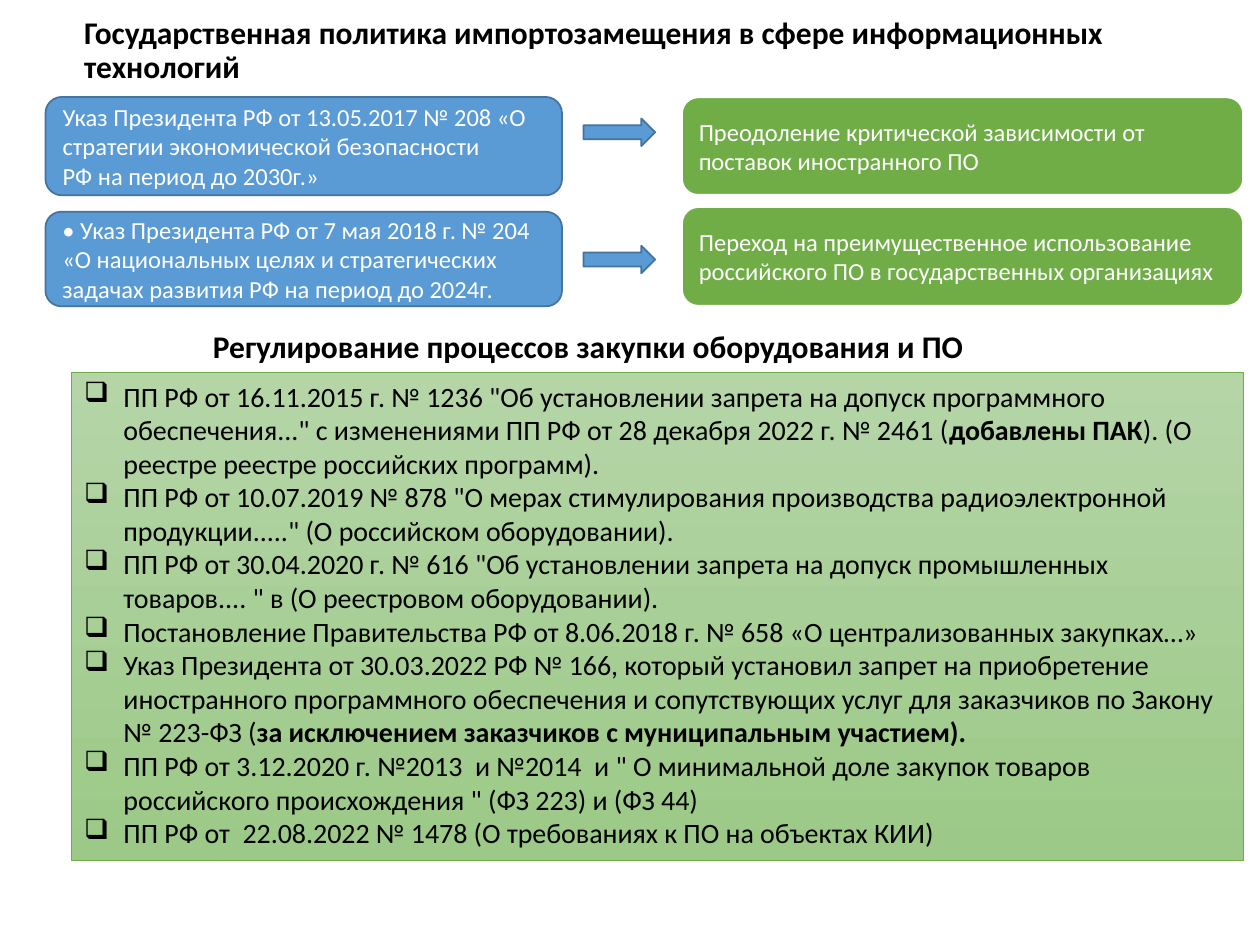
"""Build a slide on import substitution policy in information technology."""
from lxml import etree
from pptx import Presentation
from pptx import util as u
from pptx.dml.color import RGBColor
from pptx.enum import shapes, text
from pptx.oxml import ns

Pt = u.Pt
FONT = "Calibri"
BLACK = RGBColor(0x00, 0x00, 0x00)
WHITE = RGBColor(0xFF, 0xFF, 0xFF)
BLUE = RGBColor(0x5B, 0x9B, 0xD5)
DARK_BLUE = RGBColor(0x43, 0x73, 0x9E)
GREEN = RGBColor(0x70, 0xAD, 0x47)
LIGHT_GREEN = RGBColor(0xB5, 0xD5, 0xA7)
MID_GREEN = RGBColor(0x9C, 0xC9, 0x87)

DECREES = [
    ("Указ Президента РФ от 13.05.2017 № 208 «О стратегии экономической безопасности\n"
     "РФ на период до 2030г.»", (55.4, 56.2),
     "Преодоление критической зависимости от поставок иностранного ПО", (55.4, 56.2), 67.7),
    ("• Указ Президента РФ от 7 мая 2018 г. № 204 «О национальных целях и стратегических\n"
     "задачах развития РФ на период до 2024г.", (121, 54),
     "Переход на преимущественное использование\n"
     "российского ПО в государственных организациях", (118.1, 56.9), 140.4),
]

# Within each regulation, plain and bold pieces alternate, plain first.
REGULATIONS = [
    ['ПП РФ от 16.11.2015 г. № 1236 "Об установлении запрета на допуск программного '
     'обеспечения..." с изменениями ПП РФ от 28 декабря 2022 г. № 2461 (',
     "добавлены ПАК", "). (О реестре реестре российских программ)."],
    ['ПП РФ от 10.07.2019 № 878 "О мерах стимулирования производства радиоэлектронной '
     'продукции....." (О российском оборудовании).'],
    ['ПП РФ от 30.04.2020 г. № 616 "Об установлении запрета на допуск промышленных '
     'товаров.... " в (О реестровом оборудовании).'],
    ["Постановление Правительства РФ от 8.06.2018 г. № 658 «О централизованных закупках…»"],
    ["Указ Президента от 30.03.2022 РФ № 166, который установил запрет на приобретение "
     "иностранного программного обеспечения и сопутствующих услуг для заказчиков по Закону "
     "№ 223-ФЗ (", "за исключением заказчиков с муниципальным участием)."],
    ['ПП РФ от 3.12.2020 г. №2013  и №2014  и " О минимальной доле закупок товаров '
     'российского происхождения " (ФЗ 223) и (ФЗ 44)'],
    ["ПП РФ от  22.08.2022 № 1478 (О требованиях к ПО на объектах КИИ)"],
]


def style_font(font, size, color, bold=False):
    font.name, font.size, font.bold = FONT, Pt(size), bold
    font.color.rgb = color


def fill_text(frame, wording, size, color, bold=False):
    frame.text = wording
    for paragraph in frame.paragraphs:
        paragraph.alignment = text.PP_ALIGN.LEFT
        for run in paragraph.runs:
            style_font(run.font, size, color, bold)


def add_heading(slide, wording, box, anchor, wrap):
    heading = slide.shapes.add_textbox(*map(Pt, box)).text_frame
    heading.word_wrap = wrap
    heading.vertical_anchor = anchor
    fill_text(heading, wording, 18, BLACK, bold=True)
    return heading


def add_block(slide, preset, box, line_color, line_width, fill_color=None):
    block = slide.shapes.add_shape(preset, *map(Pt, box))
    block.shadow.inherit = False
    if fill_color is not None:
        block.fill.solid()
        block.fill.fore_color.rgb = fill_color
    block.line.color.rgb = line_color
    block.line.width = Pt(line_width)
    return block


def add_card(slide, wording, box, fill_color, line_color, line_width):
    card = add_block(slide, shapes.MSO_SHAPE.ROUNDED_RECTANGLE, box,
                     line_color, line_width, fill_color)
    card.text_frame.vertical_anchor = text.MSO_ANCHOR.MIDDLE
    fill_text(card.text_frame, wording, 14, WHITE)


def add_bullet(paragraph, sign, indent):
    properties = paragraph._p.get_or_add_pPr()
    properties.set("marL", str(Pt(indent)))
    properties.set("indent", str(-Pt(indent)))
    etree.SubElement(properties, ns.qn("a:buChar")).set("char", sign)


def add_regulations(slide, box):
    panel = add_block(slide, shapes.MSO_SHAPE.RECTANGLE, box, GREEN, 0.5)
    panel.fill.gradient()
    panel.fill.gradient_angle = 270
    for stop, color in zip(panel.fill.gradient_stops, (LIGHT_GREEN, MID_GREEN)):
        stop.color.rgb = color
    frame = panel.text_frame
    frame.vertical_anchor = text.MSO_ANCHOR.TOP
    for number, pieces in enumerate(REGULATIONS):
        paragraph = frame.add_paragraph() if number else frame.paragraphs[0]
        paragraph.alignment = text.PP_ALIGN.LEFT
        add_bullet(paragraph, "❑", 22.5)
        for position, piece in enumerate(pieces):
            run = paragraph.add_run()
            run.text = piece
            style_font(run.font, 16, BLACK, bold=position % 2 == 1)


def main():
    deck = Presentation()
    deck.slide_width, deck.slide_height = Pt(720), Pt(540)
    slide = deck.slides.add_slide(deck.slide_layouts[6])

    title = add_heading(
        slide, "Государственная политика импортозамещения в сфере информационных технологий",
        (41, 5, 674.6, 49), text.MSO_ANCHOR.MIDDLE, wrap=True)
    title.paragraphs[0].line_spacing = 0.9

    for decree, (decree_top, decree_height), goal, (goal_top, goal_height), arrow_top in DECREES:
        add_card(slide, decree, (26, decree_top, 295.2, decree_height), BLUE, DARK_BLUE, 1)
        add_block(slide, shapes.MSO_SHAPE.RIGHT_ARROW, (333.4, arrow_top, 41, 15.8),
                  DARK_BLUE, 1, BLUE)
        add_card(slide, goal, (389.5, goal_top, 321.1, goal_height), GREEN, WHITE, 1.5)

    add_heading(slide, "Регулирование процессов закупки оборудования и ПО",
                (114.5, 183.6, 447, 28.8), text.MSO_ANCHOR.TOP, wrap=False)
    add_regulations(slide, (41, 213.1, 669.6, 278.6))
    deck.save("out.pptx")


if __name__ == "__main__":
    main()
